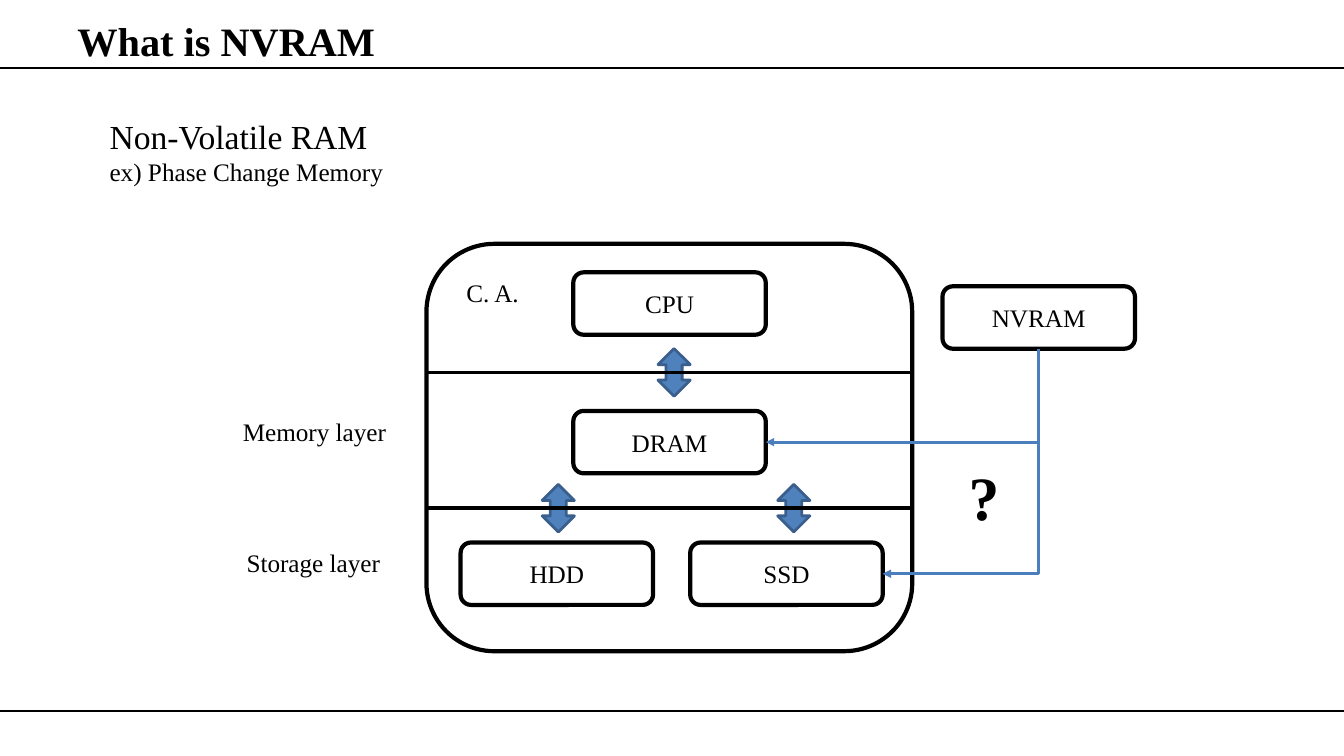
from lxml import etree
from pptx import Presentation
from pptx.enum import shapes, text
from pptx.dml.color import RGBColor
from pptx.oxml import ns
from pptx.util import Pt

COLORS = {"ink": "000000", "arrow": "4F81BD", "arrow_edge": "3A5F8C", "link": "4B7EBC"}
FONT = "Times New Roman"
BOX_W, BOX_H = 137.5, 44.6
ARROW_W, ARROW_H = 23, 34
SYSTEM = (304.6, 174.2, 347, 291)  # left, top, width, height


def rgb(name):
    return RGBColor.from_string(COLORS[name])


def write(p, content, size=18, bold=False, align=text.PP_ALIGN.LEFT):
    p.alignment = align
    r = p.add_run()
    r.text = content
    r.font.name, r.font.size, r.font.bold = FONT, Pt(size), bold
    r.font.color.rgb = rgb("ink")


def add_title(s, content):
    sp = s.shapes.title
    sp.left, sp.top, sp.width, sp.height = Pt(48), Pt(9.4), Pt(864), Pt(39)
    tf = sp.text_frame
    tf.auto_size = text.MSO_AUTO_SIZE.NONE
    tf.vertical_anchor = text.MSO_ANCHOR.MIDDLE
    write(tf.paragraphs[0], content, size=28.8, bold=True)


def add_text(s, left, top, width, height, lines, **fmt):
    """Add a text box; lines holds (content, size) pairs, one per paragraph."""
    tf = s.shapes.add_textbox(Pt(left), Pt(top), Pt(width), Pt(height)).text_frame
    tf.word_wrap = True
    for i, (content, size) in enumerate(lines):
        p = tf.add_paragraph() if i else tf.paragraphs[0]
        write(p, content, size=size, **fmt)


def add_shape(s, kind, left, top, width, height, line="ink", weight=3, fill=None):
    sp = s.shapes.add_shape(kind, Pt(left), Pt(top), Pt(width), Pt(height))
    sp.shadow.inherit = False
    sp.line.color.rgb, sp.line.width = rgb(line), Pt(weight)
    if fill:
        sp.fill.solid()
        sp.fill.fore_color.rgb = rgb(fill)
    else:
        sp.fill.background()
    return sp


def add_box(s, left, top, width, height, label=None):
    sp = add_shape(s, shapes.MSO_SHAPE.ROUNDED_RECTANGLE, left, top, width, height)
    if label:
        tf = sp.text_frame
        tf.vertical_anchor = text.MSO_ANCHOR.MIDDLE
        write(tf.paragraphs[0], label, align=text.PP_ALIGN.CENTER)


def add_line(s, x1, y1, x2, y2, color="ink", weight=1.5, kind=shapes.MSO_CONNECTOR.STRAIGHT):
    c = s.shapes.add_connector(kind, Pt(x1), Pt(y1), Pt(x2), Pt(y2))
    c.line.color.rgb, c.line.width = rgb(color), Pt(weight)
    etree.SubElement(c._element.spPr, ns.qn("a:effectLst"))
    return c


def add_elbow_arrow(s, x1, y1, x2, y2):
    """Run down from (x1, y1), then left to an arrowhead at (x2, y2)."""
    run, drop = x1 - x2, y2 - y1
    left, top = (x1 + x2 - drop) / 2, (y1 + y2 - run) / 2
    c = add_line(s, left, top, left + drop, top + run, "link", 2, shapes.MSO_CONNECTOR.ELBOW)
    sp_pr = c._element.spPr
    sp_pr.find(ns.qn("a:xfrm")).set("rot", "5400000")  # a quarter turn
    sp_pr.find(ns.qn("a:prstGeom")).set("prst", "bentConnector2")
    etree.SubElement(sp_pr.find(ns.qn("a:ln")), ns.qn("a:tailEnd"), type="triangle")


def main():
    prs = Presentation()
    prs.slide_width, prs.slide_height = Pt(960), Pt(540)
    s = prs.slides.add_slide(prs.slide_layouts[5])

    for y in (48.8, 508):
        add_line(s, 0, y, 960, y)
    add_title(s, "What is NVRAM")
    add_text(s, 71.2, 79.2, 244, 58.3, [("Non-Volatile RAM", 24), ("ex) Phase Change Memory", 18)])

    boxes = {"DRAM": (409.5, 293.5), "HDD": (329, 387.5), "SSD": (493, 387.5),
             "CPU": (409.5, 194.5), "NVRAM": (673.2, 204.5)}
    for label, (left, top) in boxes.items():
        add_box(s, left, top, BOX_W, BOX_H, label)
    add_box(s, *SYSTEM)

    memory_y, storage_y = 266, 363
    for x, y in ((481.5, memory_y), (398.8, storage_y), (567, storage_y)):
        add_shape(s, shapes.MSO_SHAPE.UP_DOWN_ARROW, x - ARROW_W / 2, y - ARROW_H / 2,
                  ARROW_W, ARROW_H, line="arrow_edge", weight=2, fill="arrow")
    for y in (memory_y, storage_y):
        add_line(s, SYSTEM[0], y, SYSTEM[0] + SYSTEM[2], y, weight=2.5)

    nvram_x, nvram_y = boxes["NVRAM"]
    for target in ("SSD", "DRAM"):
        x, y = boxes[target]
        add_elbow_arrow(s, nvram_x + BOX_W / 2, nvram_y + BOX_H, x + BOX_W, y + BOX_H / 2)

    add_text(s, 684.7, 324, 49, 60.5, [("?", 44)], bold=True)
    for label, left, top, width in (("C. A.", 326, 194.5, 58.5),
                                    ("Memory layer", 166.3, 293.5, 123),
                                    ("Storage layer", 169, 387.5, 123)):
        add_text(s, left, top, width, 29, [(label, 18)])

    prs.save("out.pptx")


if __name__ == "__main__":
    main()
